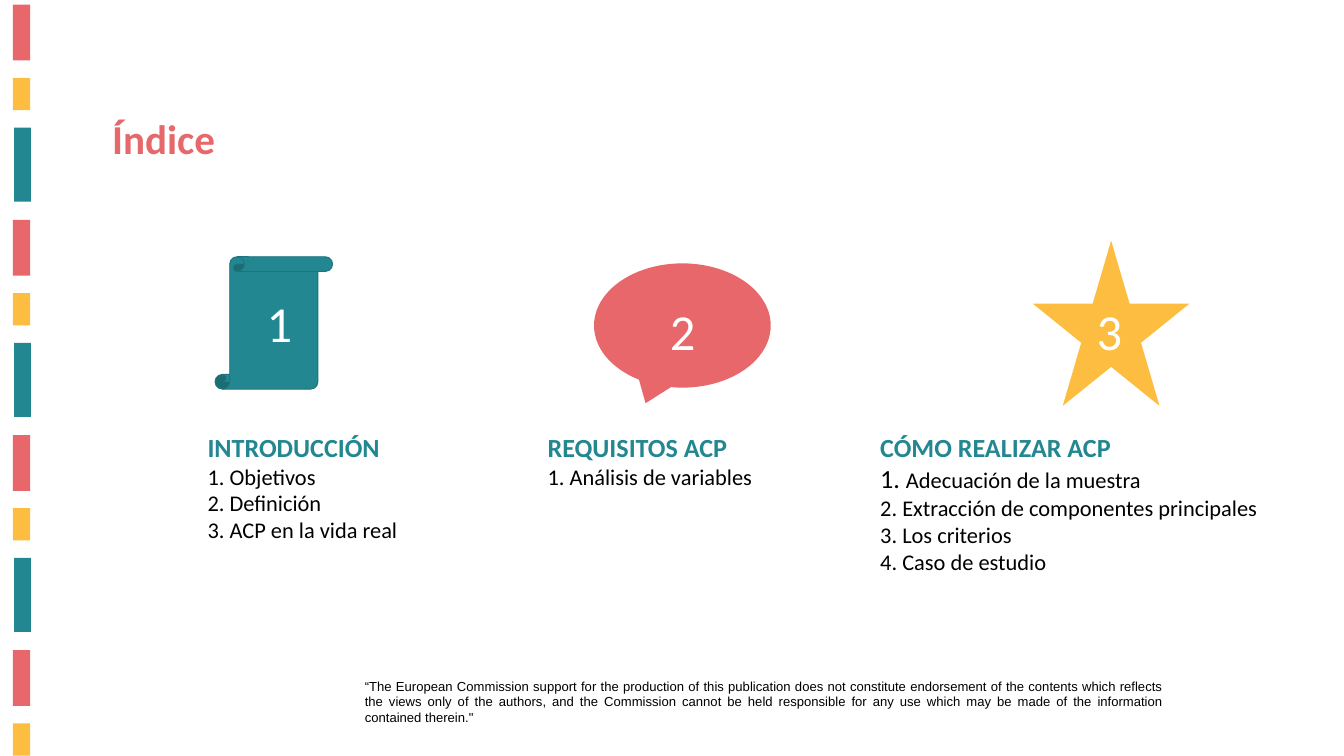
from pptx import Presentation
from pptx.dml.color import RGBColor
from pptx.enum.shapes import MSO_SHAPE as Shape
from pptx.enum.text import MSO_ANCHOR as Anchor, MSO_AUTO_SIZE as AutoSize, PP_ALIGN as Align
from pptx.util import Inches, Pt

THEME = {
    "coral": RGBColor.from_string("E8676A"),
    "title coral": RGBColor.from_string("E7686A"),
    "yellow": RGBColor.from_string("FDBD40"),
    "teal": RGBColor.from_string("238791"),
    "dark teal": RGBColor.from_string("1E737C"),
    "black": RGBColor.from_string("000000"),
    "white": RGBColor.from_string("FFFFFF"),
    "font": "Calibri",
    "notice font": "Arial",
    "title": 44,
    "heading": 28,
    "item": 24,
    "number": 54,
    "notice": 14,
}

deck = Presentation()
deck.slide_width, deck.slide_height = Inches(20), Inches(11.25)
COL, ROW = deck.slide_width / 100, deck.slide_height / 100
slide = deck.slides.add_slide(deck.slide_layouts[5])


def cells(left, top, width, height):
    """Turn columns and rows of the 100 x 100 grid into slide lengths."""
    return round(left * COL), round(top * ROW), round(width * COL), round(height * ROW)


def add_run(paragraph, text, size, color, bold=False, font="font"):
    run = paragraph.add_run()
    run.text = text
    run.font.name, run.font.size, run.font.bold = THEME[font], Pt(THEME[size]), bold
    run.font.color.rgb = THEME[color]


# Striped band on the left edge: three colours repeated down the slide
STRIPE_PERIOD = 28.46
stripes = [
    ("coral", 0.95, 0.62, 1.3, 7.38),
    ("yellow", 0.95, 10.31, 1.3, 4.27),
    ("teal", 1.05, 16.89, 1.25, 9.78),
]
for cycle in range(4):
    for color, left, first_top, width, height in stripes:
        top = first_top + cycle * STRIPE_PERIOD
        if top < 100:
            stripe = slide.shapes.add_shape(Shape.RECTANGLE, *cells(left, top, width, height))
            stripe.shadow.inherit = False
            stripe.fill.solid()
            stripe.fill.fore_color.rgb = THEME[color]
            stripe.line.fill.background()

# Title
title = slide.shapes.title
title.left, title.top, title.width, title.height = cells(7.85, 14.58, 33.85, 14.04)
title.text_frame.vertical_anchor = Anchor.TOP
title.text_frame.auto_size = AutoSize.NONE
title.text_frame.paragraphs[0].alignment = Align.LEFT
add_run(title.text_frame.paragraphs[0], "Índice", "title", "title coral", bold=True)

# Sections: icon, number and contents; the first marker has its own size
sections = [
    {"icon": Shape.VERTICAL_SCROLL, "icon cells": (16, 33.96, 8.75, 17.51),
     "color": "teal", "outline": "dark teal", "number cells": (19.35, 38.22, 7.9, 8.98),
     "contents cells": (14.95, 56.62, 17.1, 22.13), "heading": "INTRODUCCIÓN",
     "first marker": "item", "items": ["Objetivos", "Definición", "ACP en la vida real"]},
    {"icon": Shape.OVAL_CALLOUT, "icon cells": (44.2, 34.84, 13.15, 16.44),
     "color": "coral", "outline": None, "number cells": (49.35, 39.2, 5.4, 8.98),
     "contents cells": (40.25, 56.62, 21.05, 10.76), "heading": "REQUISITOS ACP",
     "first marker": "item", "items": ["Análisis de variables"]},
    {"icon": Shape.STAR_5_POINT, "icon cells": (76.85, 31.82, 11.65, 21.87),
     "color": "yellow", "outline": None, "number cells": (81.1, 39.2, 7.5, 8.98),
     "contents cells": (65, 56.62, 31.05, 20.09), "heading": "CÓMO REALIZAR ACP",
     "first marker": "heading",
     "items": ["Adecuación de la muestra", "Extracción de componentes principales",
               "Los criterios", "Caso de estudio"]},
]
for number, section in enumerate(sections, start=1):
    icon = slide.shapes.add_shape(section["icon"], *cells(*section["icon cells"]))
    icon.shadow.inherit = False
    icon.fill.solid()
    icon.fill.fore_color.rgb = THEME[section["color"]]
    if section["outline"]:
        icon.line.color.rgb = THEME[section["outline"]]
        icon.line.width = Pt(1)
    else:
        icon.line.fill.background()

    numeral = slide.shapes.add_textbox(*cells(*section["number cells"])).text_frame
    numeral.word_wrap = True
    add_run(numeral.paragraphs[0], str(number), "number", "white")

    contents = slide.shapes.add_textbox(*cells(*section["contents cells"])).text_frame
    contents.word_wrap = True
    add_run(contents.paragraphs[0], section["heading"], "heading", "teal", bold=True)
    for position, item in enumerate(section["items"], start=1):
        entry = contents.add_paragraph()
        marker_size = section["first marker"] if position == 1 else "item"
        add_run(entry, f"{position}. ", marker_size, "black")
        add_run(entry, item, "item", "black")

# Funding notice
notice = slide.shapes.add_textbox(*cells(26.65, 89.24, 60.4, 7.2)).text_frame
notice.word_wrap = True
notice.paragraphs[0].alignment = Align.JUSTIFY
add_run(
    notice.paragraphs[0],
    "“The European Commission support for the production of this publication does not "
    "constitute endorsement of the contents which reflects the views only of the authors, "
    "and the Commission cannot be held responsible for any use which may be made of the "
    'information contained therein."',
    "notice", "black", font="notice font",
)

deck.save("out.pptx")
